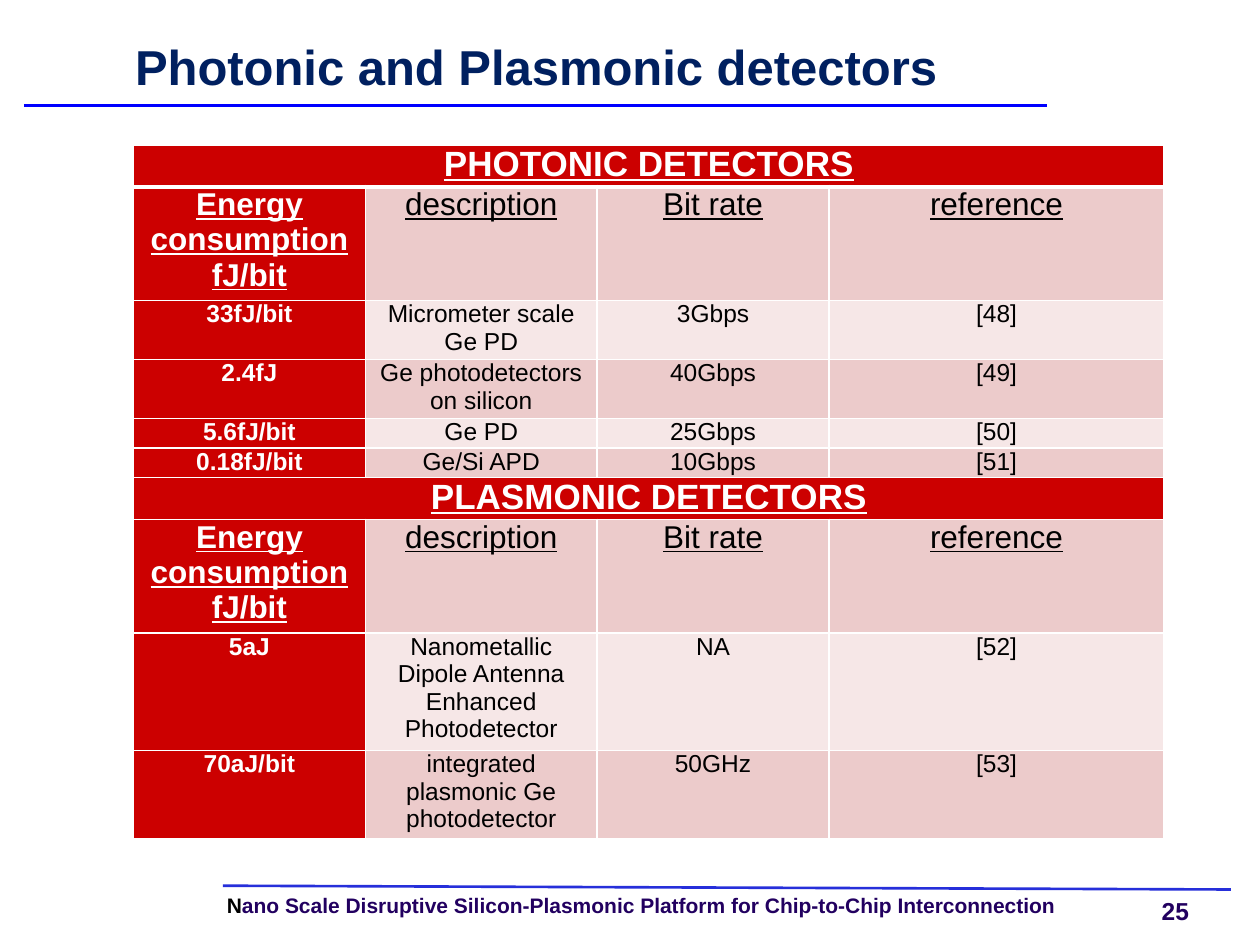
from pptx import Presentation
from pptx.dml.color import RGBColor as Rgb
from pptx.enum.shapes import MSO_CONNECTOR as Link
from pptx.enum.text import MSO_ANCHOR as Anchor, PP_ALIGN as Align
from pptx.oxml.ns import qn
from pptx.util import Inches, Pt
from lxml.etree import SubElement as Sub, Element

hues = {"red": "CC0000", "rose": "ECCBCB", "pale": "F6E7E7", "white": "FFFFFF",
        "black": "000000", "navy": "002060", "plum": "220060",
        "blue": "0000FF", "rule": "262FDA"}

deck = Presentation()
deck.slide_width, deck.slide_height = Inches(10), Inches(7.5)
col, row = deck.slide_width / 100, deck.slide_height / 100
slide = deck.slides.add_slide(deck.slide_layouts[6])


def place(*nums):
    return [round(n * (row if i % 2 else col)) for i, n in enumerate(nums)]


def write(para, text, size, hue, bold=True, under=False):
    run = para.add_run()
    run.text = text
    font = run.font
    font.name, font.size, font.bold = "Arial", Pt(size), bold
    font.underline = under
    font.color.rgb = Rgb.from_string(hues[hue])


labels = [
    ((18, 94.8, 71.4, 2.4), 0.9, Align.LEFT, Anchor.TOP, 12,
     [("N", "black"),
      ("ano Scale Disruptive Silicon-Plasmonic Platform for Chip-to-Chip Interconnection", "plum")]),
    ((92.2, 94.8, 2.4, 3.07), 1.0, Align.LEFT, Anchor.TOP, 14, [("25", "plum")]),
    ((2, 2.67, 81.1, 8.93), Pt(32), Align.CENTER, Anchor.MIDDLE, 28,
     [("Photonic and Plasmonic detectors", "navy")]),
]
for spot, gap, align, anchor, size, runs in labels:
    frame = slide.shapes.add_textbox(*place(*spot)).text_frame
    frame.word_wrap = size != 14
    frame.vertical_anchor = anchor
    frame.margin_left = frame.margin_right = frame.margin_top = frame.margin_bottom = 0
    para = frame.paragraphs[0]
    para.alignment, para.line_spacing = align, gap
    for text, hue in runs:
        write(para, text, size, hue)

for ends, hue in [((17.7, 93.73, 97.7, 94.13), "rule"), ((1.9, 11.2, 83.1, 11.2), "blue")]:
    line = slide.shapes.add_connector(Link.STRAIGHT, *place(*ends))
    line.line.color.rgb = Rgb.from_string(hues[hue])
    line.line.width = Pt(1.5)
    Sub(line._element.spPr, qn("a:effectLst"))

heads = ["Energy consumption fJ/bit", "description", "Bit rate", "reference"]
data = [
    ["PHOTONIC DETECTORS"],
    heads,
    ["33fJ/bit", "Micrometer scale Ge PD", "3Gbps", "[48]"],
    ["2.4fJ", "Ge photodetectors on silicon", "40Gbps", "[49]"],
    ["5.6fJ/bit", "Ge PD", "25Gbps", "[50]"],
    ["0.18fJ/bit", "Ge/Si APD", "10Gbps", "[51]"],
    ["PLASMONIC DETECTORS"],
    heads,
    ["5aJ", "Nanometallic Dipole Antenna Enhanced Photodetector", "NA", "[52]"],
    ["70aJ/bit", "integrated plasmonic Ge photodetector", "50GHz", "[53]"],
]
widths = [18.4, 18.4, 18.4, 26.6]
tall = [3.2, 8.8, 5.33, 6.27, 2.67, 3.07, 3.2, 8.8, 12.4, 9.33]
grid = slide.shapes.add_table(len(data), len(widths),
                              *place(10.6, 15.33, sum(widths), sum(tall))).table
for part, width in zip(grid.columns, widths):
    part.width = round(width * col)
for part, high in zip(grid.rows, tall):
    part.height = round(high * row)

for r, texts in enumerate(data):
    banner = len(texts) == 1
    if banner:
        grid.cell(r, 0).merge(grid.cell(r, len(widths) - 1))
    for c in range(len(widths)):
        cell = grid.cell(r, c)
        key = banner or c == 0
        cell.margin_left = cell.margin_right = Inches(0.07)
        cell.margin_top = cell.margin_bottom = 0
        cell.fill.solid()
        band = "red" if key else "rose" if r % 2 else "pale"
        cell.fill.fore_color.rgb = Rgb.from_string(hues[band])
        props = cell._tc.get_or_add_tcPr()
        for n, side in enumerate(["lnL", "lnR", "lnT", "lnB"]):
            thick = (r, side) in [(0, "lnB"), (1, "lnT")]
            edge = Element(qn("a:" + side), w=str(Pt(3 if thick else 1)))
            Sub(Sub(edge, qn("a:solidFill")), qn("a:srgbClr"), val=hues["white"])
            props.insert(n, edge)
        if c < len(texts):
            para = cell.text_frame.paragraphs[0]
            para.alignment = Align.CENTER
            if not banner:
                para.space_after = Pt(6)
            head = banner or texts is heads
            size = 20 if banner else 18 if head else 14
            write(para, texts[c], size, "white" if key else "black", key, head)

deck.save("out.pptx")
